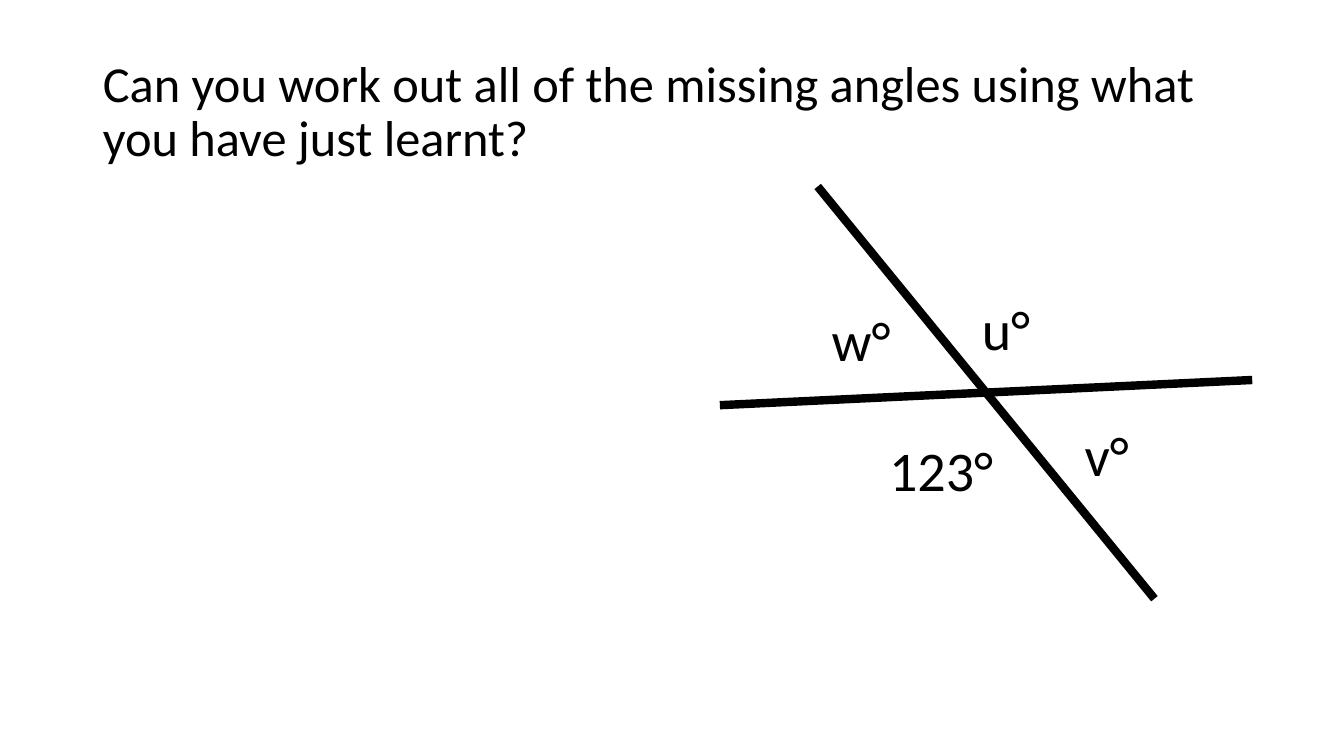
from lxml import etree
from pptx import Presentation
from pptx.dml.color import RGBColor
from pptx.enum.shapes import MSO_CONNECTOR
from pptx.enum.text import MSO_ANCHOR, MSO_AUTO_SIZE, PP_ALIGN
from pptx.oxml.ns import qn
from pptx.util import Pt

PX = 9144
STRAIGHT = MSO_CONNECTOR.STRAIGHT
MIDDLE = MSO_ANCHOR.MIDDLE
LEFT = PP_ALIGN.LEFT
FIT_SHAPE = MSO_AUTO_SIZE.SHAPE_TO_FIT_TEXT
FONT = "Calibri"
COLORS = {"ink": "000000", "paper": "FFFFFF"}

TITLE = "Can you work out all of the missing angles using what you have just learnt?"
LINES = [(811, 185, 1145, 594), (1242, 377, 714, 402)]
ANGLES = [
    ("u°", 964, 287, 151),
    ("123°", 872, 427, 142),
    ("v°", 1066, 412, 151),
    ("w°", 815, 298, 151),
]


def px(*lengths):
    """Turn pixel lengths into EMU."""
    return [n * PX for n in lengths]


def color(name):
    """Look up a named colour."""
    return RGBColor.from_string(COLORS[name])


def write(tf, text, size=40, ink="ink", spacing=None):
    """Put one formatted run of text into a text frame."""
    tf.word_wrap = True
    p = tf.paragraphs[0]
    p.alignment = LEFT
    if spacing:
        p.line_spacing = spacing
    r = p.add_run()
    r.text = text
    r.font.name = FONT
    r.font.size = Pt(size)
    r.font.color.rgb = color(ink)


def set_title(s, text, x, y, w, h):
    """Place and fill the title placeholder."""
    sp = s.shapes.title
    sp.left, sp.top, sp.width, sp.height = px(x, y, w, h)
    sp.text_frame.vertical_anchor = MIDDLE
    write(sp.text_frame, text, size=36, spacing=0.9)


def add_line(s, x1, y1, x2, y2):
    """Draw one thick straight line."""
    line = s.shapes.add_connector(STRAIGHT, *px(x1, y1, x2, y2))
    line.line.color.rgb = color("ink")
    line.line.width = Pt(6)
    etree.SubElement(line._element.spPr, qn("a:effectLst"))


def add_angle(s, text, x, y, w):
    """Add one angle label."""
    tf = s.shapes.add_textbox(*px(x, y, w, 77)).text_frame
    write(tf, text)
    tf.auto_size = FIT_SHAPE


def main():
    """Build the slide and save it."""
    prs = Presentation()
    prs.slide_width, prs.slide_height = px(1333, 750)
    s = prs.slides.add_slide(prs.slide_layouts[5])
    s.background.fill.solid()
    s.background.fill.fore_color.rgb = color("paper")
    set_title(s, TITLE, 92, 40, 1150, 145)
    for ends in LINES:
        add_line(s, *ends)
    for angle in ANGLES:
        add_angle(s, *angle)
    prs.save("out.pptx")


if __name__ == "__main__":
    main()
